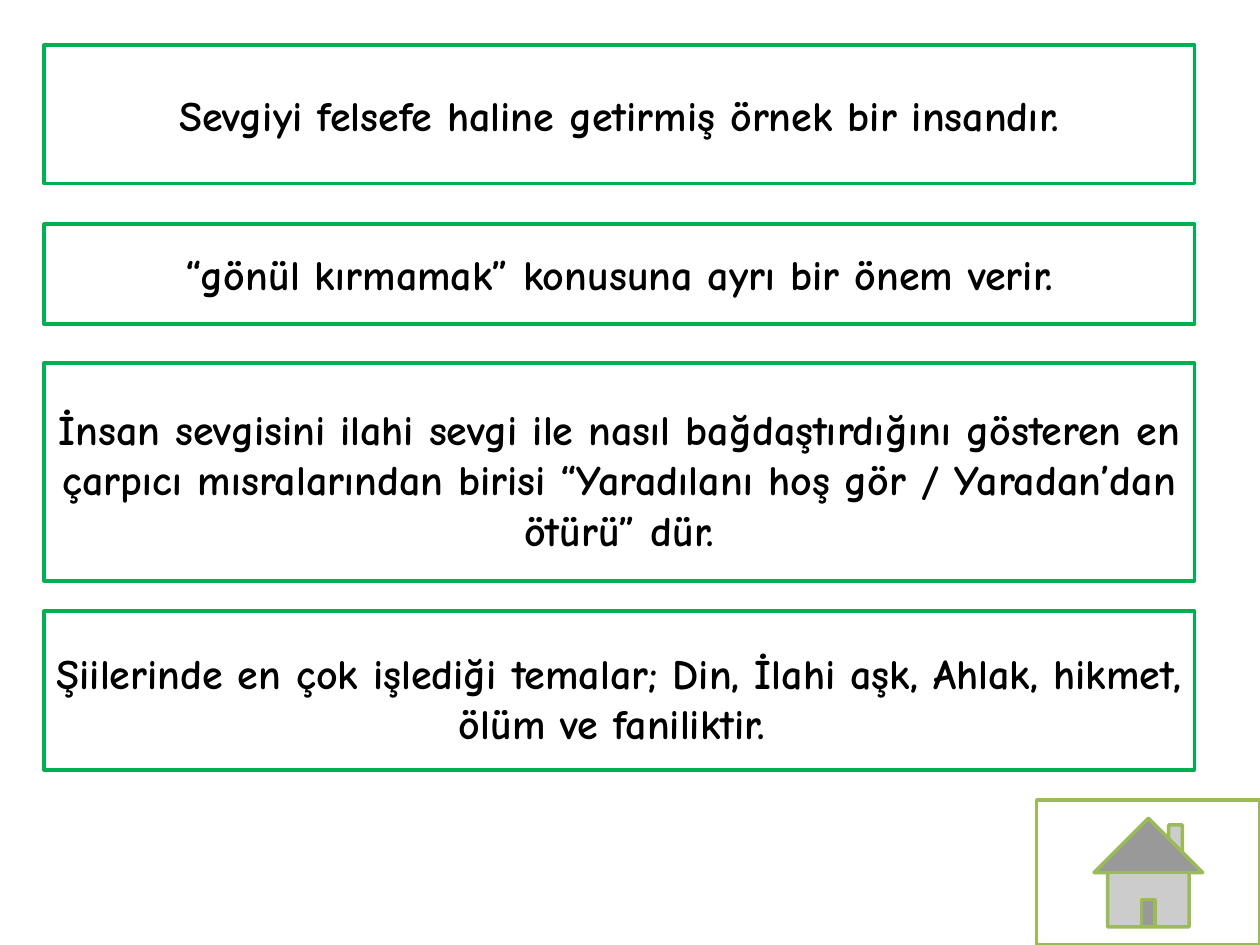
from pptx import Presentation
from pptx.dml.color import RGBColor
from pptx.enum.shapes import MSO_SHAPE as Shape
from pptx.enum.text import MSO_ANCHOR as Anchor, PP_ALIGN as Align
from pptx.util import Cm, Pt

WHITE = RGBColor(0xFF, 0xFF, 0xFF)
BLACK = RGBColor(0x00, 0x00, 0x00)
GREEN = RGBColor(0x00, 0xB0, 0x50)
OLIVE = RGBColor(0x9B, 0xBB, 0x59)

# Content: top, height and top inset in cm, then the statement
STATEMENTS = [
    (0.91, 2.79, 0.13, "Sevgiyi felsefe haline getirmiş örnek bir insandır."),
    (4.52, 2.01, 0.13, "“gönül kırmamak” konusuna ayrı bir önem verir."),
    (7.32, 4.39, 0.41,
     "İnsan sevgisini ilahi sevgi ile nasıl bağdaştırdığını gösteren en çarpıcı "
     "mısralarından birisi “Yaradılanı hoş gör / Yaradan’dan ötürü” dür."),
    (12.32, 3.2, 0.41,
     "Şiilerinde en çok işlediği temalar; Din, İlahi aşk, Ahlak, hikmet, "
     "ölüm ve faniliktir. "),
]
PAGE_WIDTH, PAGE_HEIGHT = 25.4, 19.05
BOX_LEFT, BOX_WIDTH = 0.89, 23.19
BUTTON_WIDTH, BUTTON_HEIGHT = 4.5, 2.92


def add_framed(page, kind, left, top, width, height, line_color):
    shape = page.shapes.add_shape(kind, Cm(left), Cm(top), Cm(width), Cm(height))
    shape.shadow.inherit = False
    shape.fill.solid()
    shape.fill.fore_color.rgb = WHITE
    shape.line.color.rgb = line_color
    shape.line.width = Pt(2)
    return shape


deck = Presentation()
deck.slide_width, deck.slide_height = Cm(PAGE_WIDTH), Cm(PAGE_HEIGHT)
page = deck.slides.add_slide(deck.slide_layouts[6])

# Statement boxes
for top, height, inset, text in STATEMENTS:
    box = add_framed(page, Shape.RECTANGLE, BOX_LEFT, top, BOX_WIDTH, height, GREEN)
    frame = box.text_frame
    frame.word_wrap = True
    frame.vertical_anchor = Anchor.MIDDLE
    frame.margin_top = Cm(inset)
    para = frame.paragraphs[0]
    para.text = text
    para.alignment = Align.CENTER
    para.font.name = "Comic Neue"
    para.font.size = Pt(24)
    para.font.bold = True
    para.font.color.rgb = BLACK

# Home button in the bottom right corner
add_framed(page, Shape.ACTION_BUTTON_HOME, PAGE_WIDTH - BUTTON_WIDTH,
           PAGE_HEIGHT - BUTTON_HEIGHT, BUTTON_WIDTH, BUTTON_HEIGHT, OLIVE)

deck.save("out.pptx")
